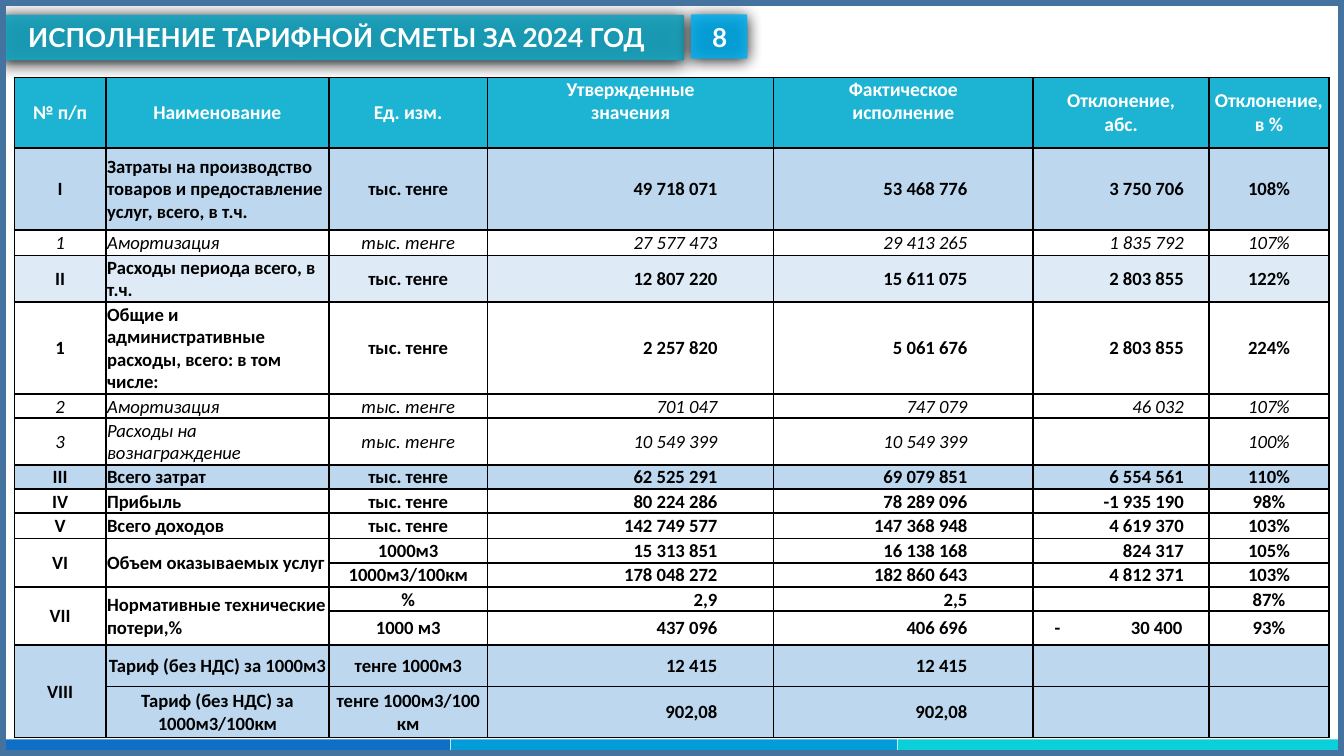
from lxml.etree import SubElement
from pptx import Presentation
from pptx.dml.color import RGBColor
from pptx.enum.shapes import MSO_SHAPE as Shape
from pptx.enum.text import MSO_ANCHOR as Anchor, MSO_AUTO_SIZE as AutoSize, PP_ALIGN as Align
from pptx.oxml.ns import qn
from pptx.util import Inches, Pt

WHITE = RGBColor(0xFF, 0xFF, 0xFF)
BLACK = RGBColor(0x00, 0x00, 0x00)
TEAL = RGBColor(0x1A, 0xA4, 0xBE)
SKY = RGBColor(0x00, 0xB0, 0xF0)
FRAME = RGBColor(0x43, 0x73, 0x9E)
HEADER = RGBColor(0x1C, 0xB4, 0xD2)
TOTAL = RGBColor(0xBD, 0xD7, 0xEE)
PERIOD = RGBColor(0xDE, 0xEB, 0xF7)
STRIPES = [RGBColor(0x0F, 0x6F, 0xC6), RGBColor(0x00, 0x9D, 0xD9), RGBColor(0x0B, 0xD0, 0xD9)]

HEADINGS = ["№ п/п", "Наименование", "Ед. изм.", "Утвержденные\nзначения",
            "Фактическое\nисполнение", "Отклонение,\nабс.", "Отклонение, в %"]
TENGE = "тыс. тенге"
BUDGET = [
    (TOTAL, False, "I", "Затраты на производство товаров и предоставление услуг, всего, в т.ч.",
     TENGE, "49 718 071", "53 468 776", "3 750 706", "108%"),
    (None, True, "1", "Амортизация", TENGE, "27 577 473", "29 413 265", "1 835 792", "107%"),
    (PERIOD, False, "II", "Расходы периода всего, в т.ч.",
     TENGE, "12 807 220", "15 611 075", "2 803 855", "122%"),
    (None, False, "1", "Общие и административные расходы, всего: в том числе:",
     TENGE, "2 257 820", "5 061 676", "2 803 855", "224%"),
    (None, True, "2", "Амортизация", TENGE, "701 047", "747 079", "46 032", "107%"),
    (None, True, "3", "Расходы на вознаграждение", TENGE, "10 549 399", "10 549 399", "", "100%"),
    (TOTAL, False, "III", "Всего затрат", TENGE, "62 525 291", "69 079 851", "6 554 561", "110%"),
    (None, False, "IV", "Прибыль", TENGE, "80 224 286", "78 289 096", "-1 935 190", "98%"),
    (None, False, "V", "Всего доходов", TENGE, "142 749 577", "147 368 948", "4 619 370", "103%"),
    (None, False, "VI", "Объем оказываемых услуг",
     "1000м3", "15 313 851", "16 138 168", "824 317", "105%"),
    (None, False, "", "", "1000м3/100км", "178 048 272", "182 860 643", "4 812 371", "103%"),
    (None, False, "VII", "Нормативные технические потери,%", "%", "2,9", "2,5", "", "87%"),
    (None, False, "", "", "1000 м3", "437 096", "406 696", "-\t30 400", "93%"),
    (TOTAL, False, "VIII", "Тариф (без НДС) за 1000м3", "тенге 1000м3", "12 415", "12 415", "", ""),
    (TOTAL, False, "", "Тариф (без НДС) за 1000м3/100км",
     "тенге 1000м3/100 км", "902,08", "902,08", "", ""),
]
COLUMN_SHARES = [68, 166, 118, 213, 193, 131, 89]
ROW_SHARES = [52, 61, 19, 34, 67, 18, 34, 18, 18, 19, 18, 18, 18, 25, 31, 38]
MERGES = [(10, 0), (10, 1), (12, 0), (12, 1), (14, 0)]
NUMBER_INDENTS = {3: 0.42, 4: 0.49, 5: 0.19}


class TariffSlide:
    title_font, table_font = "Lato", "Calibri"
    title_size, header_size, body_size = 14, 10.5, 10

    def __init__(self, deck):
        self.width, self.height = deck.slide_width, deck.slide_height
        self.slide = deck.slides.add_slide(deck.slide_layouts[5])
        self.shapes = self.slide.shapes

    def area(self, left, top, width, height):
        return (round(self.width * left / 100), round(self.height * top / 100),
                round(self.width * width / 100), round(self.height * height / 100))

    def block(self, kind, area, fill=None):
        block = self.shapes.add_shape(kind, *self.area(*area))
        block.shadow.inherit = False
        block.line.fill.background()
        if fill is None:
            block.fill.background()
        else:
            block.fill.solid()
            block.fill.fore_color.rgb = fill
        return block

    def frame(self):
        border = self.block(Shape.RECTANGLE, (0, 0, 100, 100)).line
        border.color.rgb, border.width = FRAME, Pt(6)

    def plate(self, area, fill, opacity):
        plate = self.block(Shape.ROUNDED_RECTANGLE, area, fill)
        plate.adjustments[0] = 0.03
        properties = plate.element.spPr
        tint = properties.find(qn("a:solidFill"))[0]
        SubElement(tint, qn("a:alpha"), val=str(opacity * 1000))
        glow = SubElement(properties.find(qn("a:effectLst")), qn("a:outerShdw"), blurRad=str(Pt(8.5)),
                          dist=str(Pt(1)), dir="5400000", algn="ctr", rotWithShape="0")
        SubElement(glow, qn("a:srgbClr"), val=str(BLACK))

    def style(self, paragraph, font, size, color, bold=True, italic=False, align=Align.LEFT):
        paragraph.alignment = align
        face = paragraph.font
        face.name, face.size, face.bold, face.italic = font, Pt(size), bold, italic
        face.color.rgb = color

    def heading(self, holder, text, area):
        holder.left, holder.top, holder.width, holder.height = self.area(*area)
        frame = holder.text_frame
        frame.text = text
        frame.word_wrap, frame.auto_size = True, AutoSize.NONE
        frame.vertical_anchor = Anchor.MIDDLE
        self.style(frame.paragraphs[0], self.title_font, self.title_size, WHITE)

    def title(self, text, area):
        holder = self.shapes.title
        holder.element.getparent().append(holder.element)
        self.heading(holder, text, area)

    def label(self, text, area):
        self.heading(self.shapes.add_textbox(0, 0, 0, 0), text, area)

    def cell(self, cell, text, fill, size, color, align, bold=True, italic=False):
        cell.text = text
        cell.vertical_anchor = Anchor.MIDDLE
        cell.margin_left = cell.margin_right = cell.margin_top = Inches(0.01)
        cell.margin_bottom = 0
        for paragraph in cell.text_frame.paragraphs:
            if "\t" in text:
                stops = SubElement(paragraph._p.get_or_add_pPr(), qn("a:tabLst"))
                SubElement(stops, qn("a:tab"), pos=str(Inches(0.95)), algn="r")
            self.style(paragraph, self.table_font, size, color, bold, italic, align)
            if not text:
                SubElement(paragraph._p, qn("a:endParaRPr"), sz=str(size * 100))
        properties = cell._tc.get_or_add_tcPr()
        for side in ("a:lnL", "a:lnR", "a:lnT", "a:lnB"):
            edge = SubElement(properties, qn(side), w=str(Pt(1)))
            SubElement(SubElement(edge, qn("a:solidFill")), qn("a:srgbClr"), val=str(BLACK))
        if fill is None:
            cell.fill.background()
        else:
            cell.fill.solid()
            cell.fill.fore_color.rgb = fill

    def budget(self, area):
        left, top, width, height = self.area(*area)
        table = self.shapes.add_table(len(ROW_SHARES), len(COLUMN_SHARES), left, top, width, height).table
        table.first_row = table.horz_banding = False
        for column, share in zip(table.columns, COLUMN_SHARES):
            column.width = round(width * share / sum(COLUMN_SHARES))
        for row, share in zip(table.rows, ROW_SHARES):
            row.height = round(height * share / sum(ROW_SHARES))
        for c, text in enumerate(HEADINGS):
            heading = table.cell(0, c)
            self.cell(heading, text, HEADER, self.header_size, WHITE, Align.CENTER)
            heading.margin_left = heading.margin_right = heading.margin_top = 0
            if c in (3, 4):
                heading.margin_bottom = Inches(0.17)
        for r, (fill, italic, *texts) in enumerate(BUDGET, 1):
            for c, text in enumerate(texts):
                entry = table.cell(r, c)
                align = Align.LEFT if c == 1 and r < 14 or "\t" in text else Align.CENTER
                if c in NUMBER_INDENTS and "\t" not in text:
                    align = Align.RIGHT
                self.cell(entry, text, fill, self.body_size, BLACK, align, not italic, italic)
                if "\t" in text:
                    entry.margin_left = Inches(0.16)
                elif c in NUMBER_INDENTS:
                    entry.margin_right = Inches(NUMBER_INDENTS[c])
        for r, c in MERGES:
            table.cell(r, c).merge(table.cell(r + 1, c))


def main():
    deck = Presentation()
    deck.slide_width = Inches(10)
    deck.slide_height = deck.slide_width * 9 // 16
    page = TariffSlide(deck)
    for position, color in enumerate(STRIPES):
        page.block(Shape.RECTANGLE, (0.3 + 33.25 * position, 97.8, 33.2, 1.6), color)
    page.plate((0, 1.96, 50.9, 6.04), TEAL, 93)
    page.title("ИСПОЛНЕНИЕ ТАРИФНОЙ СМЕТЫ ЗА 2024 ГОД", (1.1, 1.9, 64.1, 6.04))
    page.plate((51.4, 1.9, 4.2, 5.87), SKY, 86)
    page.label("8", (52, 1.9, 3.8, 6.04))
    page.frame()
    page.budget((1.07, 10.24, 97.8, 86.8))
    deck.save("out.pptx")


if __name__ == "__main__":
    main()
